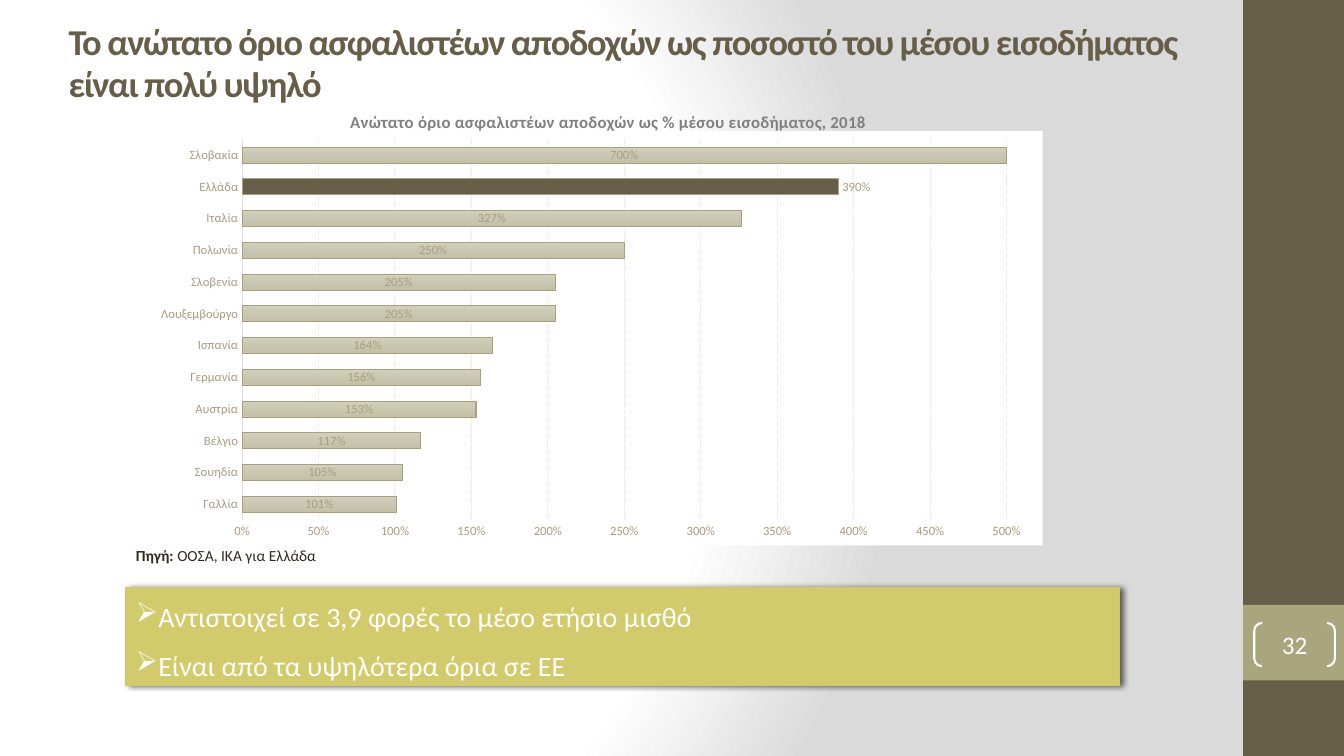
from dataclasses import dataclass
from lxml import etree
from pptx import Presentation
from pptx.chart.data import CategoryChartData
from pptx.dml.color import RGBColor
from pptx.enum.chart import XL_CHART_TYPE, XL_LABEL_POSITION, XL_TICK_MARK
from pptx.enum.dml import MSO_LINE
from pptx.enum.shapes import MSO_SHAPE
from pptx.enum.text import MSO_ANCHOR, MSO_AUTO_SIZE, PP_ALIGN
from pptx.oxml import parse_xml
from pptx.oxml.ns import nsdecls, qn
from pptx.util import Inches, Pt

BAR = XL_CHART_TYPE.BAR_CLUSTERED
LABEL_CENTER, LABEL_END = XL_LABEL_POSITION.CENTER, XL_LABEL_POSITION.OUTSIDE_END
NO_TICK = XL_TICK_MARK.NONE
DOTTED = MSO_LINE.ROUND_DOT
RECT, BRACKETS = MSO_SHAPE.RECTANGLE, MSO_SHAPE.DOUBLE_BRACKET
TOP, MIDDLE = MSO_ANCHOR.TOP, MSO_ANCHOR.MIDDLE
LEFT, CENTER = PP_ALIGN.LEFT, PP_ALIGN.CENTER
NO_FIT = MSO_AUTO_SIZE.NONE


@dataclass(frozen=True)
class Theme:
    """Colours, font and type sizes of the slide."""
    font: str = "Calibri"
    dark: str = "675E47"
    band: str = "A9A57C"
    callout: str = "D2CB6C"
    callout_line: str = "D0C967"
    white: str = "FFFFFF"
    ink: str = "2F2B20"
    grey: str = "808080"
    axis: str = "A89D7F"
    grid: str = "E5E2D9"
    bar_line: str = "A5A179"
    bar_stops: tuple = ((0, "D2D0BD"), (50, "C9C7B1"), (100, "C3C0A5"))
    back_stops: tuple = ((0, "FFFFFF"), (75, "FFFFFF"), (100, "DADADA"))
    title_size: float = 26
    body_size: float = 20
    number_size: float = 18
    heading_size: float = 12
    source_size: float = 11
    chart_size: float = 10
    label_size: float = 9


class Builder:
    """Draws styled elements on the current slide."""

    def __init__(self, prs, theme):
        """Add a title-only slide."""
        self.theme = theme
        self.s = prs.slides.add_slide(prs.slide_layouts[5])

    def font(self, font, size, color, bold=False):
        """Format a font."""
        font.name, font.size, font.bold = self.theme.font, Pt(size), bold
        font.color.rgb = RGBColor.from_string(color)

    def line(self, line, color, width):
        """Format a line."""
        line.color.rgb = RGBColor.from_string(color)
        line.width = Pt(width)

    def solid(self, fill, color):
        """Apply a solid fill."""
        fill.solid()
        fill.fore_color.rgb = RGBColor.from_string(color)

    def gradient(self, fill, owner, stops, direction):
        """Apply a gradient fill with the given stops and direction XML."""
        fill.gradient()
        old = next(owner.iter(qn("a:gradFill")))
        gs = "".join(f'<a:gs pos="{pos * 1000}"><a:srgbClr val="{color}"/></a:gs>'
                     for pos, color in stops)
        old.getparent().replace(old, parse_xml(
            f'<a:gradFill {nsdecls("a")} rotWithShape="1"><a:gsLst>{gs}</a:gsLst>'
            f'{direction}</a:gradFill>'))

    def background(self):
        """Apply the circular background gradient."""
        self.gradient(self.s.background.fill, self.s.element, self.theme.back_stops,
                      '<a:path path="circle"><a:fillToRect l="20000" t="50000" '
                      'r="100000" b="50000"/></a:path>')

    def run(self, p, text, size, color, bold=False, spacing=0):
        """Add a formatted run."""
        r = p.add_run()
        r.text = text
        self.font(r.font, size, color, bold)
        if spacing:
            r._r.get_or_add_rPr().set("spc", str(round(spacing * 100)))

    def title(self, text, box):
        """Place and fill the title placeholder."""
        sp = self.s.shapes.title
        sp.left, sp.top, sp.width, sp.height = map(Inches, box)
        tf = sp.text_frame
        tf.auto_size, tf.vertical_anchor = NO_FIT, MIDDLE
        p = tf.paragraphs[0]
        p.alignment, p.line_spacing = LEFT, Pt(30)
        self.run(p, text, self.theme.title_size, self.theme.dark, True, -1)

    def shape(self, kind, box, fill=None, line=None, width=1):
        """Add a preset shape."""
        sp = self.s.shapes.add_shape(kind, *map(Inches, box))
        sp.shadow.inherit = False
        if fill:
            self.solid(sp.fill, fill)
        else:
            sp.fill.background()
        if line:
            self.line(sp.line, line, width)
        else:
            sp.line.fill.background()
        return sp

    def text(self, box, runs, size, color, align=LEFT, spacing=0):
        """Add a one-paragraph text box of (text, bold) runs."""
        tf = self.s.shapes.add_textbox(*map(Inches, box)).text_frame
        tf.word_wrap = True
        p = tf.paragraphs[0]
        p.alignment = align
        for text, bold in runs:
            self.run(p, text, size, color, bold, spacing)

    def callout(self, box, points):
        """Add the shadowed box of bulleted points."""
        t = self.theme
        sp = self.shape(RECT, box, t.callout, t.callout_line)
        shadow = etree.SubElement(sp._element.spPr.find(qn("a:effectLst")), qn("a:outerShdw"),
                                  blurRad=str(Pt(4)), dist=str(Pt(2)), dir="0")
        color = etree.SubElement(shadow, qn("a:srgbClr"), val="000000")
        etree.SubElement(color, qn("a:alpha"), val="60000")
        tf = sp.text_frame
        tf.word_wrap, tf.vertical_anchor = True, TOP
        for i, point in enumerate(points):
            p = tf.add_paragraph() if i else tf.paragraphs[0]
            p.alignment, p.line_spacing, p.space_before = LEFT, 1.2, Pt(6)
            pPr = p._p.get_or_add_pPr()
            pPr.set("marL", str(Inches(0.22)))
            pPr.set("indent", str(-Inches(0.22)))
            etree.SubElement(pPr, qn("a:buChar"), char="➢")
            self.run(p, point, t.body_size, t.white)

    def page_number(self, box, number):
        """Add the bracketed page number."""
        t = self.theme
        sp = self.shape(BRACKETS, box, line=t.white, width=1.5)
        sp.adjustments[0] = 0.18
        tf = sp.text_frame
        tf.margin_left = tf.margin_right = tf.margin_top = tf.margin_bottom = 0
        tf.vertical_anchor = MIDDLE
        p = tf.paragraphs[0]
        p.alignment = CENTER
        self.run(p, number, t.number_size, t.white)

    def bar_chart(self, box, values, highlight):
        """Add the bar chart with one highlighted category."""
        t = self.theme
        data = CategoryChartData(number_format="0%")
        data.categories = list(values)
        data.add_series("Series 1", list(values.values()))
        chart = self.s.shapes.add_chart(BAR, *map(Inches, box), data).chart
        chart.has_legend = chart.has_title = False
        self.font(chart.font, t.chart_size, t.ink)
        chart.element.find(qn("c:chart")).addnext(parse_xml(
            f'<c:spPr {nsdecls("c", "a")}><a:solidFill><a:srgbClr val="{t.white}"/>'
            '</a:solidFill><a:ln><a:noFill/></a:ln></c:spPr>'))
        area = next(chart.element.iter(qn("c:plotArea")))
        for layout in area.findall(qn("c:layout")):
            area.remove(layout)
        frame = "".join(f'<c:{tag} val="{val}"/>' for tag, val in (
            ("layoutTarget", "inner"), ("xMode", "edge"), ("yMode", "edge"),
            ("x", 0.11), ("y", 0.02), ("w", 0.85), ("h", 0.92)))
        area.insert(0, parse_xml(f'<c:layout {nsdecls("c")}><c:manualLayout>{frame}'
                                 '</c:manualLayout></c:layout>'))
        cat, val = chart.category_axis, chart.value_axis
        for axis in (cat, val):
            axis.major_tick_mark = axis.minor_tick_mark = NO_TICK
            self.font(axis.tick_labels.font, t.label_size, t.axis)
        self.line(cat.format.line, t.grid, 0.75)
        val.format.line.fill.background()
        val.minimum_scale, val.maximum_scale, val.major_unit = 0, 5, 0.5
        val.tick_labels.number_format = "0%"
        val.tick_labels.number_format_is_linked = False
        val.has_major_gridlines = True
        grid = val.major_gridlines.format.line
        self.line(grid, t.grid, 0.75)
        grid.dash_style = DOTTED
        plot = chart.plots[0]
        plot.gap_width, plot.vary_by_categories = 100, False
        series = plot.series[0]
        series.invert_if_negative = False
        self.gradient(series.format.fill, series._element, t.bar_stops,
                      '<a:lin ang="5400000" scaled="0"/>')
        self.line(series.format.line, t.bar_line, 0.75)
        labels = series.data_labels
        labels.show_value, labels.position = True, LABEL_CENTER
        labels.number_format, labels.number_format_is_linked = "0%", False
        self.font(labels.font, t.label_size, t.axis)
        point = series.points[list(values).index(highlight)]
        self.solid(point.format.fill, t.dark)
        self.line(point.format.line, t.bar_line, 0.75)
        self.font(point.data_label.font, t.label_size, t.axis)
        point.data_label.position = LABEL_END


def main():
    """Build and save the slide."""
    prs = Presentation()
    prs.slide_width, prs.slide_height = Inches(13.33), Inches(7.5)
    t = Theme()
    b = Builder(prs, t)
    b.background()
    b.shape(RECT, (12.33, 0, 1, 7.5), t.dark)
    b.shape(RECT, (12.33, 6, 1, 0.75), t.band)
    b.title("Το ανώτατο όριο ασφαλιστέων αποδοχών ως ποσοστό του μέσου εισοδήματος "
            "είναι πολύ υψηλό", (0.58, 0.14, 11.33, 0.97))
    b.callout((1.25, 5.83, 9.85, 0.97), ("Αντιστοιχεί σε 3,9 φορές το μέσο ετήσιο μισθό",
                                         "Είναι από τα υψηλότερα όρια σε ΕΕ"))
    b.text((2.33, 1.06, 7.41, 0.3),
           [("Ανώτατο όριο ασφαλιστέων αποδοχών ως % μέσου εισοδήματος, 2018", True)],
           t.heading_size, t.grey, CENTER, 0.2)
    b.page_number((12.44, 6.18, 0.8, 0.43), "32")
    b.bar_chart((1.42, 1.3, 8.92, 4.11), {
        "Γαλλία": 1.01, "Σουηδία": 1.05, "Βέλγιο": 1.17, "Αυστρία": 1.53,
        "Γερμανία": 1.56, "Ισπανία": 1.64, "Λουξεμβούργο": 2.05, "Σλοβενία": 2.05,
        "Πολωνία": 2.5, "Ιταλία": 3.27, "Ελλάδα": 3.9, "Σλοβακία": 7}, "Ελλάδα")
    b.text((1.25, 5.37, 4.08, 0.29), [("Πηγή: ", True), ("ΟΟΣΑ, ΙΚΑ για Ελλάδα", False)],
           t.source_size, t.ink)
    prs.save("out.pptx")


if __name__ == "__main__":
    main()
